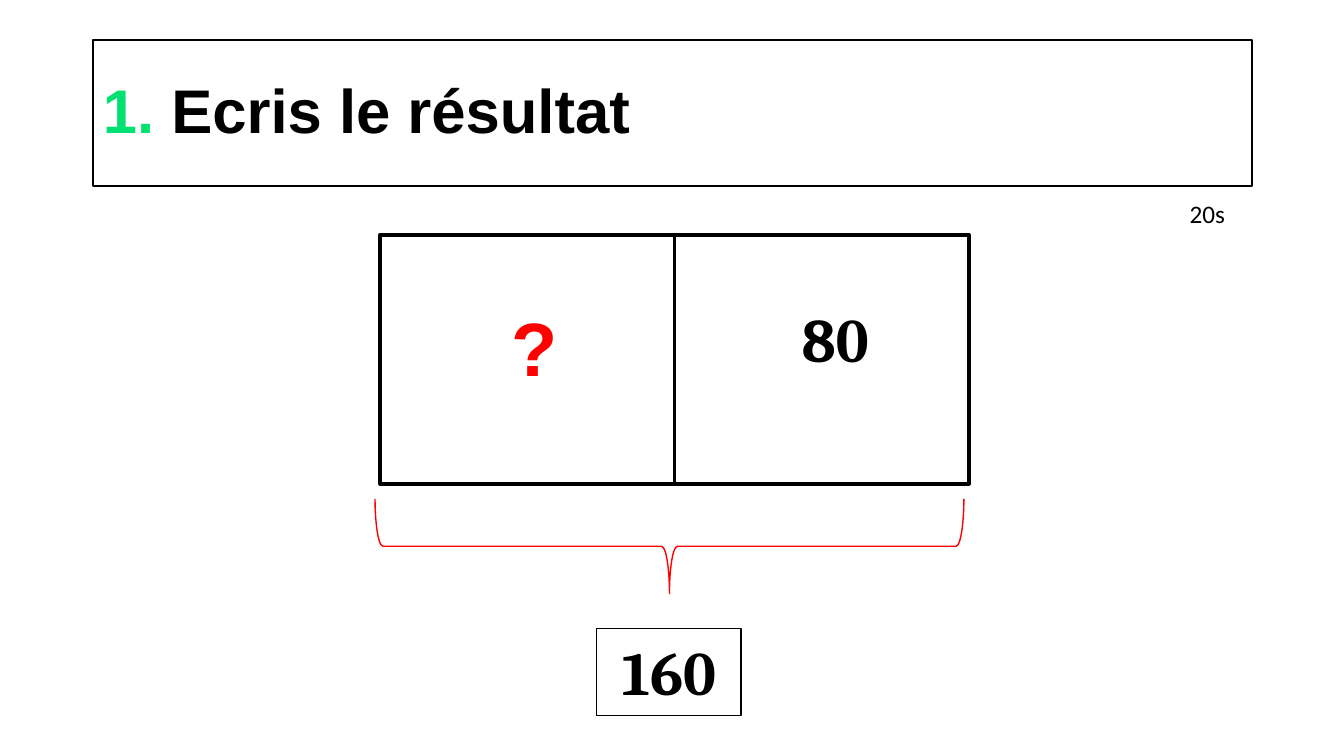
import pptx
import pptx.util
import pptx.dml.color
import pptx.enum.shapes
import pptx.enum.text

PX = pptx.util.Inches(1) // 100
BLACK = pptx.dml.color.RGBColor(0, 0, 0)
RED = pptx.dml.color.RGBColor(255, 0, 0)
GREEN = pptx.dml.color.RGBColor(0, 225, 114)
SHAPES = pptx.enum.shapes.MSO_SHAPE
ALIGN = pptx.enum.text.PP_ALIGN
ANCHOR = pptx.enum.text.MSO_ANCHOR
AUTO_SIZE = pptx.enum.text.MSO_AUTO_SIZE

CELL_LEFT, CELL_TOP, CELL_WIDTH, CELL_HEIGHT = 377, 233, 292, 247


def to_emu(*lengths):
    return [length * PX for length in lengths]


def add_run(paragraph, text, size=44, font="Cambria", color=BLACK, bold=True):
    run = paragraph.add_run()
    run.text = text
    run.font.size = pptx.util.Pt(size)
    run.font.name = font
    run.font.color.rgb = color
    run.font.bold = bold


def write_text(shape, text, align=ALIGN.CENTER, wrap=True, **text_format):
    frame = shape.text_frame
    frame.word_wrap = wrap
    frame.auto_size = AUTO_SIZE.SHAPE_TO_FIT_TEXT
    frame.vertical_anchor = ANCHOR.TOP
    paragraph = frame.paragraphs[0]
    paragraph.alignment = align
    add_run(paragraph, text, **text_format)


def add_label(slide, box, text, **text_format):
    label = slide.shapes.add_textbox(*to_emu(*box))
    write_text(label, text, **text_format)


def add_outline(slide, kind, box, color=BLACK, width=2.5):
    shape = slide.shapes.add_shape(kind, *to_emu(*box))
    shape.shadow.inherit = False
    shape.fill.background()
    shape.line.color.rgb = color
    shape.line.width = pptx.util.Pt(width)
    return shape


def set_title(slide, box, number, text):
    title = slide.shapes.title
    title.left, title.top, title.width, title.height = to_emu(*box)
    title.line.color.rgb = BLACK
    title.line.width = pptx.util.Pt(1.5)
    frame = title.text_frame
    frame.auto_size = AUTO_SIZE.NONE
    frame.vertical_anchor = ANCHOR.MIDDLE
    paragraph = frame.paragraphs[0]
    paragraph.alignment = ALIGN.LEFT
    paragraph.line_spacing = 0.9
    add_run(paragraph, number, font="Arial", color=GREEN)
    add_run(paragraph, text, font="Arial")


def main():
    presentation = pptx.Presentation()
    presentation.slide_width, presentation.slide_height = to_emu(1333, 750)
    slide = presentation.slides.add_slide(presentation.slide_layouts[5])

    set_title(slide, (92, 40, 1150, 145), "1. ", "Ecris le résultat")

    for column in range(2):
        left = CELL_LEFT + column * CELL_WIDTH
        add_outline(slide, SHAPES.RECTANGLE, (left, CELL_TOP, CELL_WIDTH, CELL_HEIGHT))
    add_label(slide, (757, 294, 143, 86), "80")
    add_label(slide, (452, 294, 156, 101), "?", size=54, font="Arial", color=RED)

    brace = add_outline(
        slide, SHAPES.RIGHT_BRACE, (617, 250, 94, 2 * CELL_WIDTH), color=RED, width=1
    )
    brace.rotation = 90

    total = add_outline(slide, SHAPES.RECTANGLE, (592, 624, 143, 86), width=0.75)
    write_text(total, "160")

    add_label(
        slide, (1170, 192, 56, 40), "20s",
        align=ALIGN.LEFT, wrap=False, size=18, font="Calibri", bold=False,
    )

    presentation.save("out.pptx")


if __name__ == "__main__":
    main()
